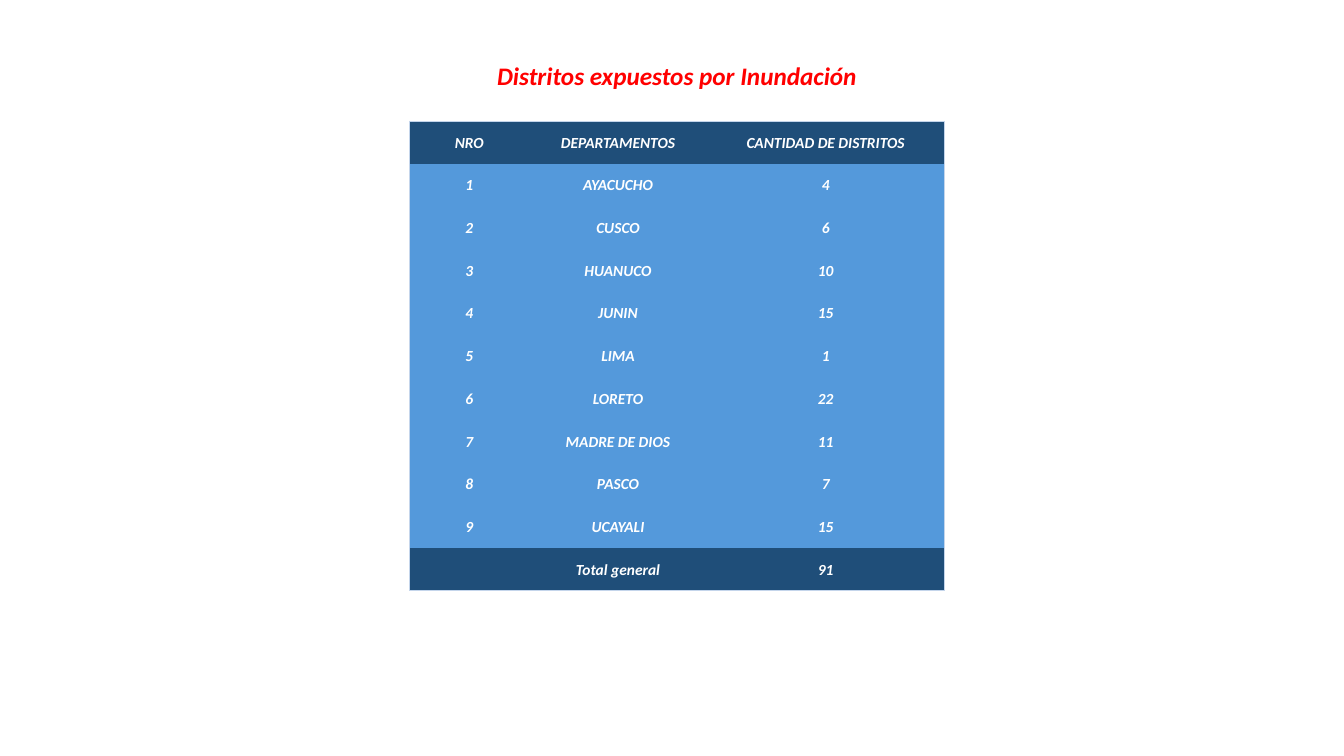
from lxml import etree
from pptx import Presentation
from pptx.dml.color import RGBColor
from pptx.enum.text import MSO_ANCHOR, MSO_AUTO_SIZE, PP_ALIGN
from pptx.oxml.ns import qn
from pptx.util import Inches, Pt

CENTER = PP_ALIGN.CENTER
MIDDLE = MSO_ANCHOR.MIDDLE
NO_AUTOFIT = MSO_AUTO_SIZE.NONE
TITLE_ONLY_LAYOUT = 5
PLAIN_TABLE_STYLE = "{2D5ABB26-0587-4C30-8999-92F81FD0307C}"

COLORS = {
    "title": "FF0000",
    "text": "FFFFFF",
    "band": "1F4E79",
    "body": "5499DB",
    "border": "C4D5EB",
}
FONT = {"name": "Calibri", "bold": True, "italic": True}
TITLE_FRAME = {
    "word_wrap": False,
    "auto_size": NO_AUTOFIT,
    "vertical_anchor": MIDDLE,
}
CELL_FORMAT = {
    "vertical_anchor": MIDDLE,
    "margin_left": Inches(0.01),
    "margin_right": Inches(0.01),
    "margin_top": Inches(0.01),
    "margin_bottom": 0,
}

SLIDE_SIZE = (13.33, 7.5)
TITLE_BOX = (4.81, 0.55, 3.81, 0.4)
TABLE_BOX = (4.06, 1.2, 5.31, 4.66)
COLUMN_WIDTHS = (1.19, 1.76, 2.36)

HEADING = "Distritos expuestos por Inundación"
HEADER = ("NRO", "DEPARTAMENTOS", "CANTIDAD DE DISTRITOS")
DISTRICTS = {
    "AYACUCHO": 4,
    "CUSCO": 6,
    "HUANUCO": 10,
    "JUNIN": 15,
    "LIMA": 1,
    "LORETO": 22,
    "MADRE DE DIOS": 11,
    "PASCO": 7,
    "UCAYALI": 15,
}


def apply(target, values):
    """Set every attribute in values on the target."""
    for attribute, value in values.items():
        setattr(target, attribute, value)


def write(frame, text, size, color):
    """Write one centred, formatted line into a text frame."""
    frame.text = text
    line = frame.paragraphs[0]
    line.alignment = CENTER
    apply(line.font, FONT)
    line.font.size = Pt(size)
    line.font.color.rgb = RGBColor.from_string(color)
    for run in line.runs:
        apply(run.font, FONT)
        run.font.size = Pt(size)
        run.font.color.rgb = RGBColor.from_string(color)


def add_border(cell, side):
    """Draw a thin line along one side of a cell."""
    properties = cell._tc.get_or_add_tcPr()
    line = etree.SubElement(properties, qn(f"a:ln{side}"), w=str(Pt(0.5)))
    fill = etree.SubElement(line, qn("a:solidFill"))
    etree.SubElement(fill, qn("a:srgbClr"), val=COLORS["border"])


def place_heading(slide, box):
    """Move the title placeholder into the box and fill it."""
    heading = slide.shapes.title
    sides = ("left", "top", "width", "height")
    apply(heading, dict(zip(sides, map(Inches, box))))
    write(heading.text_frame, HEADING, 18, COLORS["title"])
    apply(heading.text_frame, TITLE_FRAME)


def place_district_table(slide, box):
    """Build the table of districts with its total inside the box."""
    entries = [
        (number, *entry) for number, entry in enumerate(DISTRICTS.items(), 1)
    ]
    rows = [HEADER, *entries, ("", "Total general", sum(DISTRICTS.values()))]
    last_row, last_column = len(rows) - 1, len(HEADER) - 1
    frame = slide.shapes.add_table(len(rows), len(HEADER), *map(Inches, box))
    table = frame.table
    table._tbl.tblPr.find(qn("a:tableStyleId")).text = PLAIN_TABLE_STYLE
    for column, width in zip(table.columns, COLUMN_WIDTHS):
        column.width = Inches(width)
    for r, row in enumerate(rows):
        table.rows[r].height = Inches(box[3] / len(rows))
        band = "band" if r in (0, last_row) else "body"
        for c, value in enumerate(row):
            cell = table.cell(r, c)
            write(cell.text_frame, str(value), 11, COLORS["text"])
            apply(cell, CELL_FORMAT)
            outer_sides = {
                "L": c == 0,
                "R": c == last_column,
                "T": r == 0,
                "B": r == last_row,
            }
            for side, is_outer in outer_sides.items():
                if is_outer:
                    add_border(cell, side)
            cell.fill.solid()
            cell.fill.fore_color.rgb = RGBColor.from_string(COLORS[band])


def main():
    """Build the slide and save it."""
    deck = Presentation()
    deck.slide_width, deck.slide_height = map(Inches, SLIDE_SIZE)
    slide = deck.slides.add_slide(deck.slide_layouts[TITLE_ONLY_LAYOUT])
    place_heading(slide, TITLE_BOX)
    place_district_table(slide, TABLE_BOX)
    deck.save("out.pptx")


if __name__ == "__main__":
    main()
